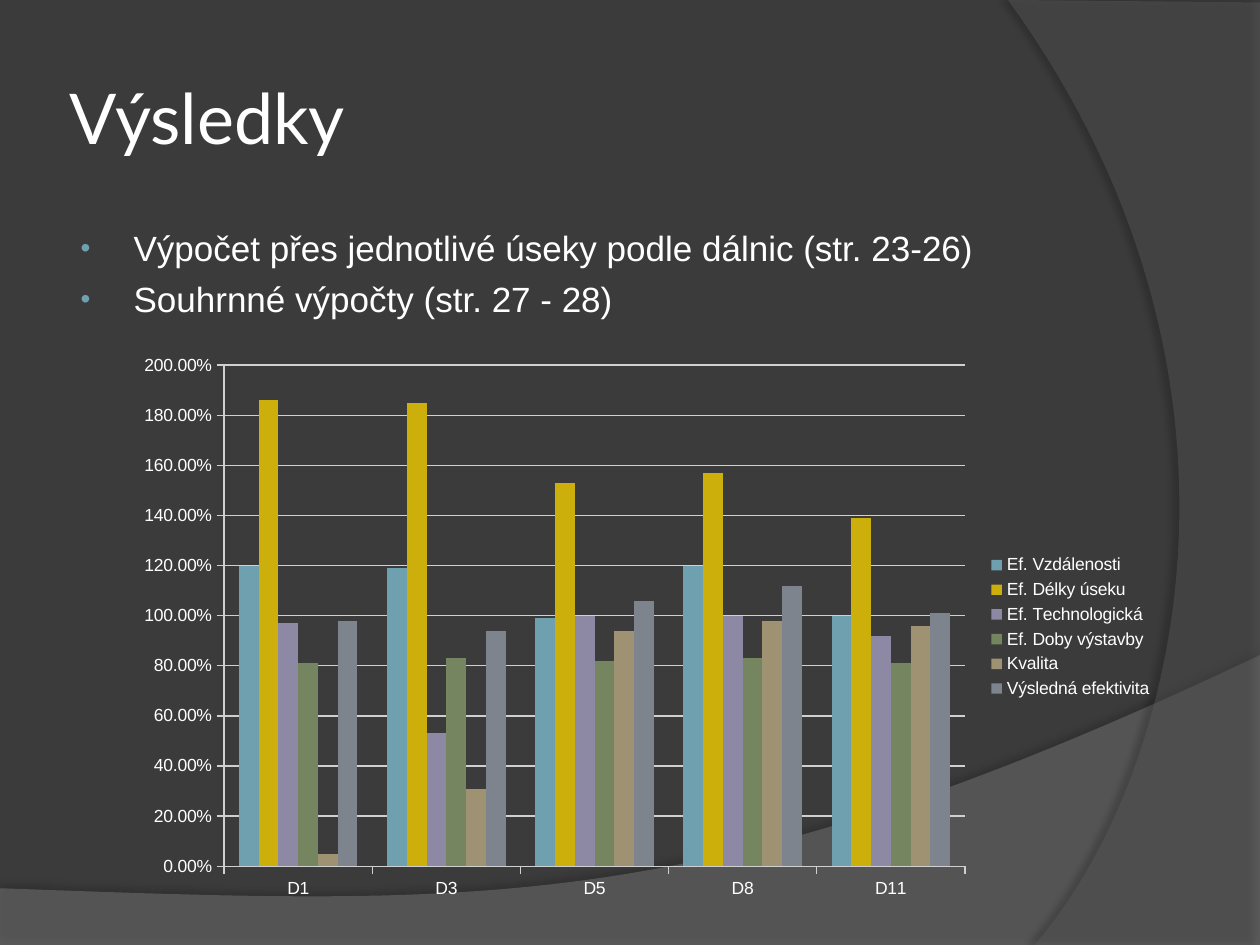
from pptx import Presentation
from pptx import util as u
from pptx.chart.data import CategoryChartData
from pptx.dml.color import RGBColor
from pptx.enum import chart as charts, text
from pptx.oxml import parse_xml
from pptx.oxml.ns import nsdecls, qn
from lxml import etree

COLORS = {
    "background": "3B3B3B", "white": "FFFFFF", "grid": "D0D0D0",
    "lower": "7F7F7F", "right": "5E5E5E", "shadow": "000000", "bullet": "6EA0B0",
}
CATEGORIES = ["D1", "D3", "D5", "D8", "D11"]
SERIES = [
    ("Ef. Vzdálenosti", [1.2, 1.19, 0.99, 1.2, 1], "6EA0B0"),
    ("Ef. Délky úseku", [1.86, 1.85, 1.53, 1.57, 1.39], "CCAF0A"),
    ("Ef. Technologická", [0.97, 0.53, 1, 1, 0.92], "8D89A4"),
    ("Ef. Doby výstavby", [0.81, 0.83, 0.82, 0.83, 0.81], "748560"),
    ("Kvalita", [0.05, 0.31, 0.94, 0.98, 0.96], "9E9273"),
    ("Výsledná efektivita", [0.98, 0.94, 1.06, 1.12, 1.01], "7E848D"),
]


def rgb(name):
    return RGBColor.from_string(COLORS.get(name, name))


def format_font(font, size, name="Arial", color="white"):
    font.size = u.Pt(size)
    font.name = name
    font.color.rgb = rgb(color)


def write(para, words, size, font="Arial", color="white", before=0):
    para.alignment = text.PP_ALIGN.LEFT
    para.space_before = u.Pt(before)
    span = para.add_run()
    span.text = words
    format_font(span.font, size, font, color)


def place(shape, box):
    shape.left, shape.top, shape.width, shape.height = map(u.Inches, box)
    shape.element.getparent().append(shape.element)


def bezier(start, first, second, end, steps=60):
    points = []
    for step in range(steps + 1):
        t = step / steps
        weights = ((1 - t) ** 3, 3 * t * (1 - t) ** 2, 3 * t * t * (1 - t), t ** 3)
        points.append(tuple(
            sum(weight * value for weight, value in zip(weights, axis))
            for axis in zip(start, first, second, end)))
    return points


def add_wave(page, points, color, alpha, shadow_alpha, distance, direction):
    corners = [(u.Inches(x), u.Inches(y)) for x, y in points]
    builder = page.shapes.build_freeform(*corners[0])
    builder.add_line_segments(corners[1:], close=True)
    wave = builder.convert_to_shape()
    wave.fill.solid()
    wave.fill.fore_color.rgb = rgb(color)
    wave.line.fill.background()
    properties = wave.element.spPr
    fill_color = properties.find(qn("a:solidFill"))[0]
    etree.SubElement(fill_color, qn("a:alpha"), val=str(alpha * 1000))
    properties.append(parse_xml(
        f'<a:effectLst {nsdecls("a")}><a:outerShdw blurRad="{u.Pt(4)}" '
        f'dist="{u.Pt(distance)}" dir="{direction * 60000}" rotWithShape="0">'
        f'<a:srgbClr val="{COLORS["shadow"]}"><a:alpha val="{shadow_alpha * 1000}"/>'
        '</a:srgbClr></a:outerShdw></a:effectLst>'))


def add_backdrop(page, width, height):
    page.background.fill.solid()
    page.background.fill.fore_color.rgb = rgb("background")
    lower = bezier((width, 5.2), (5.59, 7.29), (3.91, 7.19), (0, 7.05))
    add_wave(page, [(0, height), (width, height)] + lower, "lower", 45, 35, 3.5, 270)
    right = bezier((8.21, height), (9.35, 6.19), (10.18, 3), (8, 0))
    add_wave(page, [(width, 0.02), (width, height)] + right, "right", 40, 45, 4, 180)


def add_title(page, box, words):
    title = page.shapes.title
    place(title, box)
    frame = title.text_frame
    frame.vertical_anchor = text.MSO_ANCHOR.MIDDLE
    frame.margin_left = frame.margin_right = u.Inches(0.05)
    write(frame.paragraphs[0], words, 40, font="Lato")


def add_list(page, box, items):
    body = page.placeholders[1]
    place(body, box)
    frame = body.text_frame
    for index, item in enumerate(items):
        para = frame.add_paragraph() if index else frame.paragraphs[0]
        write(para, item, 20, before=5)
        properties = para._p.get_or_add_pPr()
        properties.set("marL", str(u.Inches(0.46)))
        properties.set("indent", str(u.Inches(-0.42)))
        color = etree.SubElement(properties, qn("a:buClr"))
        etree.SubElement(color, qn("a:srgbClr"), val=COLORS["bullet"])
        etree.SubElement(properties, qn("a:buSzPct"), val="80000")
        etree.SubElement(properties, qn("a:buFont"), typeface="Arial")
        etree.SubElement(properties, qn("a:buChar"), char="•")


def format_line(line):
    line.color.rgb = rgb("grid")
    line.width = u.Pt(0.75)


def add_results_chart(page, box):
    data = CategoryChartData(number_format="0.00%")
    data.categories = CATEGORIES
    for name, values, _ in SERIES:
        data.add_series(name, values)
    chart = page.shapes.add_chart(
        charts.XL_CHART_TYPE.COLUMN_CLUSTERED, *map(u.Inches, box), data).chart
    format_font(chart.font, 10)
    chart.has_title = False
    chart.has_legend = True
    chart.legend.position = charts.XL_LEGEND_POSITION.RIGHT
    chart.legend.include_in_layout = False
    plot = chart.plots[0]
    plot.gap_width = 150
    plot.overlap = 0
    plot.vary_by_categories = False
    for series, (_, _, color) in zip(plot.series, SERIES):
        series.format.fill.solid()
        series.format.fill.fore_color.rgb = rgb(color)
        series.invert_if_negative = False
    for axis in (chart.category_axis, chart.value_axis):
        axis.major_tick_mark = charts.XL_TICK_MARK.OUTSIDE
        axis.minor_tick_mark = charts.XL_TICK_MARK.NONE
        format_line(axis.format.line)
    values = chart.value_axis
    values.minimum_scale, values.maximum_scale, values.major_unit = 0, 2, 0.2
    values.has_major_gridlines = True
    format_line(values.major_gridlines.format.line)
    values.tick_labels.number_format = "0.00%"
    values.tick_labels.number_format_is_linked = False


def main():
    deck = Presentation()
    deck.slide_width, deck.slide_height = u.Inches(10), u.Inches(7.5)
    page = deck.slides.add_slide(deck.slide_layouts[1])
    add_backdrop(page, 10, 7.5)
    add_title(page, (0.5, 0.3, 8.17, 1.25), "Výsledky")
    add_list(page, (0.5, 1.75, 8.17, 4.95), [
        "Výpočet přes jednotlivé úseky podle dálnic (str. 23-26)",
        "Souhrnné výpočty (str. 27 - 28)",
    ])
    add_results_chart(page, (0.98, 2.73, 8.27, 4.49))
    deck.save("out.pptx")


if __name__ == "__main__":
    main()
